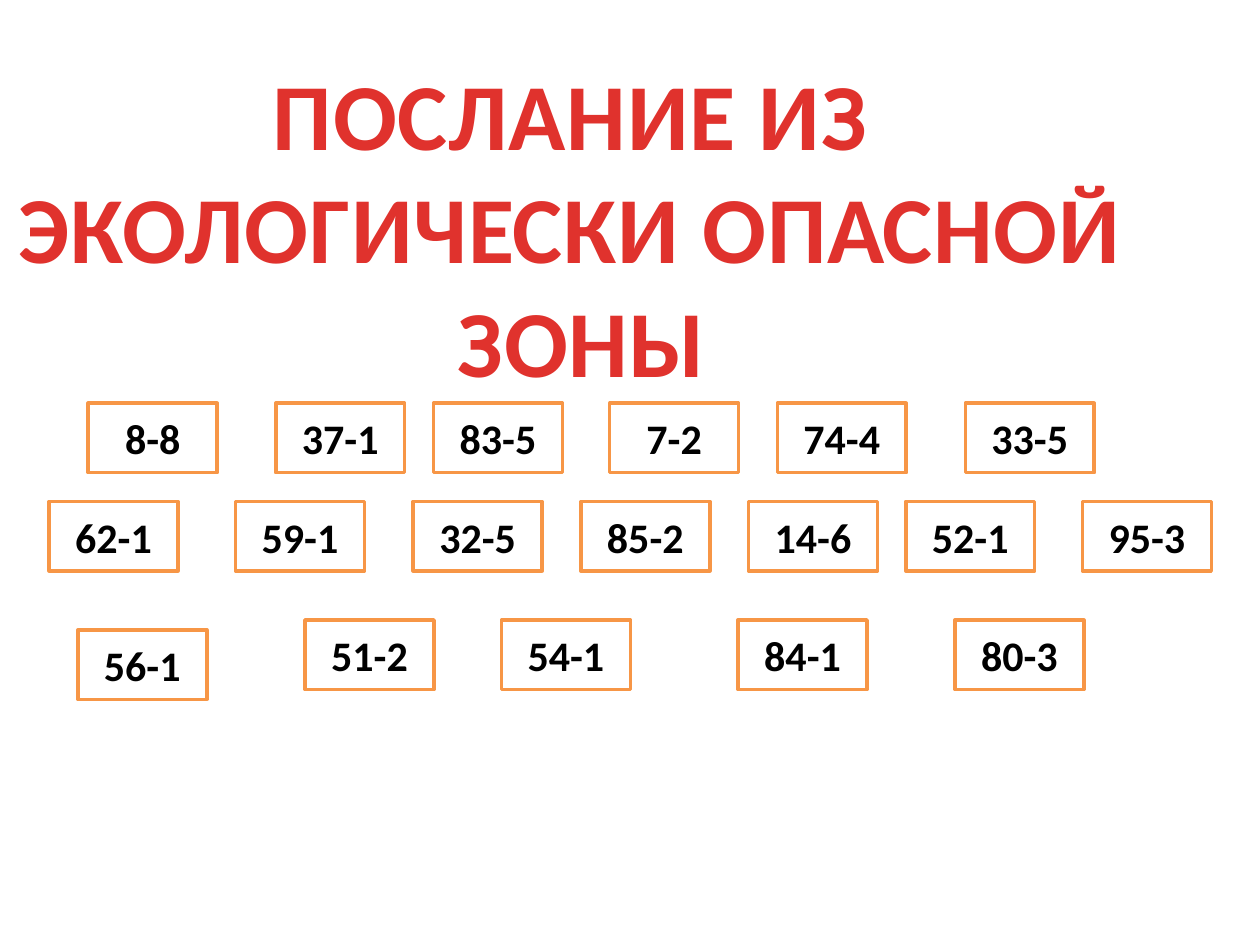
from dataclasses import dataclass

from pptx import Presentation
from pptx.dml.color import RGBColor as RGB
from pptx.enum.shapes import MSO_SHAPE as SHAPE
from pptx.enum.text import MSO_ANCHOR as ANCHOR, MSO_AUTO_SIZE as AUTOSIZE, PP_ALIGN as ALIGN
from pptx.util import Cm, Pt


@dataclass(frozen=True)
class Theme:
    font: str = "Calibri"
    title_top: RGB = RGB.from_string("E0322D")
    title_bottom: RGB = RGB.from_string("A2201C")
    card_fill: RGB = RGB.from_string("FFFFFF")
    card_line: RGB = RGB.from_string("F79646")
    card_text: RGB = RGB.from_string("000000")
    title_size: Pt = Pt(54)
    card_size: Pt = Pt(24)
    line_width: Pt = Pt(2)


theme = Theme()


def format_run(p, size):
    p.alignment = ALIGN.CENTER
    r = p.runs[0]
    r.font.name = theme.font
    r.font.size = size
    r.font.bold = True
    return r


prs = Presentation()
prs.slide_width, prs.slide_height = Cm(25.4), Cm(19.05)
s = prs.slides.add_slide(prs.slide_layouts[5])

title = s.shapes.title
title.left, title.top, title.width, title.height = Cm(0), Cm(1), Cm(23.44), Cm(7.19)
tf = title.text_frame
tf.text = "ПОСЛАНИЕ ИЗ \nЭКОЛОГИЧЕСКИ ОПАСНОЙ \nЗОНЫ"
tf.word_wrap = False
tf.auto_size = AUTOSIZE.SHAPE_TO_FIT_TEXT
tf.vertical_anchor = ANCHOR.TOP
for p in tf.paragraphs:
    r = format_run(p, theme.title_size)
    r.font._element.set("spc", "50")
    fill = r.font.fill
    fill.gradient()
    fill.gradient_angle = 270
    stops = zip(fill.gradient_stops, (0.25, 1), (theme.title_top, theme.title_bottom))
    for stop, position, color in stops:
        stop.position = position
        stop.color.rgb = color

card_rows = [
    (8.13, [("8-8", 1.78), ("37-1", 5.56), ("83-5", 8.74),
            ("7-2", 12.29), ("74-4", 15.67), ("33-5", 19.46)]),
    (10.11, [("62-1", 0.99), ("59-1", 4.75), ("32-5", 8.33), ("85-2", 11.71),
             ("14-6", 15.09), ("52-1", 18.26), ("95-3", 21.82)]),
    (12.7, [("56-1", 1.57)]),
    (12.5, [("51-2", 6.15), ("54-1", 10.11), ("84-1", 14.88), ("80-3", 19.25)]),
]
for top, cards in card_rows:
    for code, left in cards:
        sp = s.shapes.add_shape(SHAPE.RECTANGLE, Cm(left), Cm(top), Cm(2.6), Cm(1.4))
        sp.shadow.inherit = False
        sp.fill.solid()
        sp.fill.fore_color.rgb = theme.card_fill
        sp.line.color.rgb = theme.card_line
        sp.line.width = theme.line_width
        tf = sp.text_frame
        tf.text = code
        tf.vertical_anchor = ANCHOR.MIDDLE
        r = format_run(tf.paragraphs[0], theme.card_size)
        r.font.color.rgb = theme.card_text

prs.save("out.pptx")
